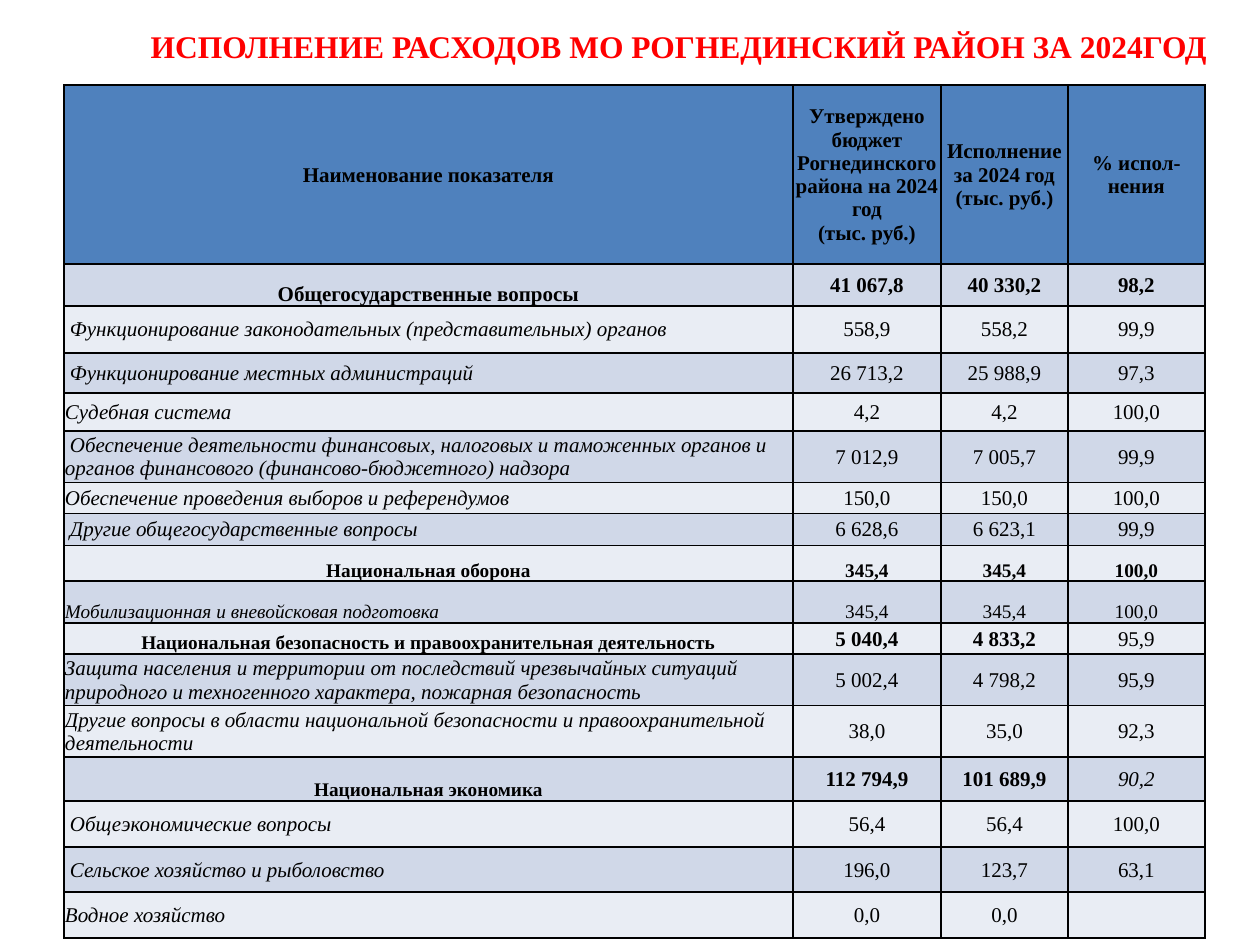
from dataclasses import dataclass, replace

from lxml import etree
from pptx import Presentation, util as u
from pptx.dml.color import RGBColor
from pptx.enum import text
from pptx.oxml import ns
from pptx.table import Table, _Cell

PX = 914400 / 126
FONT = "Times New Roman"
RED = RGBColor(0xFF, 0x00, 0x00)
BLACK = RGBColor(0x00, 0x00, 0x00)
HEADER_BLUE = RGBColor(0x4F, 0x81, 0xBD)
BANDS = (RGBColor(0xD0, 0xD8, 0xE8), RGBColor(0xE9, 0xED, 0xF4))
COLUMN_WIDTHS = (729, 148, 127, 137)
TABLE_LEFT, TABLE_TOP = 64, 85
NAME_INDENT = 5


@dataclass(frozen=True)
class Style:
    size: int = 12
    bold: bool = False
    italic: bool = False
    align: text.PP_ALIGN = text.PP_ALIGN.CENTER
    anchor: text.MSO_ANCHOR = text.MSO_ANCHOR.MIDDLE
    indent: int = 0


VALUE = Style()
BOLD = Style(bold=True)
ITALIC = Style(italic=True)
NAME = replace(ITALIC, align=text.PP_ALIGN.LEFT)
INDENTED = replace(NAME, indent=NAME_INDENT)
SECTION = replace(BOLD, anchor=text.MSO_ANCHOR.BOTTOM)
SMALL_SECTION = replace(SECTION, size=11)
SMALL_NAME = replace(NAME, size=11, anchor=text.MSO_ANCHOR.BOTTOM)
SMALL_VALUE = replace(VALUE, size=11, anchor=text.MSO_ANCHOR.BOTTOM)


@dataclass(frozen=True)
class BudgetLine:
    height: int
    name: str
    approved: str
    executed: str
    percent: str
    name_style: Style = NAME
    amount_style: Style = VALUE
    percent_style: Style = VALUE

    def cells(self) -> tuple[tuple[str, Style], ...]:
        return (
            (self.name, self.name_style),
            (self.approved, self.amount_style),
            (self.executed, self.amount_style),
            (self.percent, self.percent_style),
        )


LINES = (
    BudgetLine(179, "Наименование показателя",
               "Утверждено бюджет Рогнединского района на 2024 год\v(тыс. руб.)",
               "Исполнение за 2024 год (тыс. руб.)", "% испол-нения", BOLD, BOLD, BOLD),
    BudgetLine(42, "Общегосударственные вопросы", "41 067,8", "40 330,2", "98,2",
               SECTION, BOLD, BOLD),
    BudgetLine(47, "Функционирование законодательных (представительных) органов",
               "558,9", "558,2", "99,9", INDENTED),
    BudgetLine(40, "Функционирование местных администраций",
               "26 713,2", "25 988,9", "97,3", INDENTED),
    BudgetLine(38, "Судебная система", "4,2", "4,2", "100,0"),
    BudgetLine(51, "Обеспечение деятельности финансовых, налоговых и таможенных органов "
               "и органов финансового (финансово-бюджетного) надзора",
               "7 012,9", "7 005,7", "99,9", INDENTED),
    BudgetLine(31, "Обеспечение проведения выборов и референдумов",
               "150,0", "150,0", "100,0"),
    BudgetLine(32, "Другие общегосударственные вопросы",
               "6 628,6", "6 623,1", "99,9", INDENTED),
    BudgetLine(36, "Национальная оборона", "345,4", "345,4", "100,0",
               SMALL_SECTION, SMALL_SECTION, SMALL_SECTION),
    BudgetLine(42, "Мобилизационная и вневойсковая подготовка",
               "345,4", "345,4", "100,0", SMALL_NAME, SMALL_VALUE, SMALL_VALUE),
    BudgetLine(31, "Национальная безопасность и правоохранительная деятельность",
               "5 040,4", "4 833,2", "95,9", SMALL_SECTION, BOLD),
    BudgetLine(50, "Защита населения и территории от последствий чрезвычайных ситуаций "
               "природного и техногенного характера, пожарная безопасность",
               "5 002,4", "4 798,2", "95,9"),
    BudgetLine(48, "Другие вопросы в области национальной безопасности "
               "и правоохранительной деятельности", "38,0", "35,0", "92,3"),
    BudgetLine(44, "Национальная экономика", "112 794,9", "101 689,9", "90,2",
               SMALL_SECTION, BOLD, ITALIC),
    BudgetLine(46, "Общеэкономические вопросы", "56,4", "56,4", "100,0", INDENTED),
    BudgetLine(45, "Сельское хозяйство и рыболовство",
               "196,0", "123,7", "63,1", INDENTED),
    BudgetLine(46, "Водное хозяйство", "0,0", "0,0", ""),
)


def px(length: int) -> u.Emu:
    return u.Emu(round(length * PX))


def write(frame, wording: str, style: Style, color: RGBColor) -> None:
    paragraph = frame.paragraphs[0]
    paragraph.text = wording
    paragraph.alignment = style.align
    if style.indent:
        paragraph._p.get_or_add_pPr().set("indent", str(px(style.indent)))
    font = paragraph.font
    font.name, font.size = FONT, u.Pt(style.size)
    font.bold, font.italic = style.bold, style.italic
    font.color.rgb = color


def add_borders(cell: _Cell) -> None:
    properties = cell._tc.get_or_add_tcPr()
    for position, side in enumerate(("lnL", "lnR", "lnT", "lnB")):
        border = etree.Element(ns.qn(f"a:{side}"), w=str(u.Pt(1)))
        fill = etree.SubElement(border, ns.qn("a:solidFill"))
        etree.SubElement(fill, ns.qn("a:srgbClr"), val=str(BLACK))
        properties.insert(position, border)


def fill_line(table: Table, index: int, line: BudgetLine) -> None:
    table.rows[index].height = px(line.height)
    for column, (wording, style) in enumerate(line.cells()):
        cell = table.cell(index, column)
        cell.margin_left = cell.margin_right = cell.margin_top = px(1)
        cell.margin_bottom = 0
        cell.vertical_anchor = style.anchor
        cell.fill.solid()
        cell.fill.fore_color.rgb = BANDS[(index - 1) % 2] if index else HEADER_BLUE
        add_borders(cell)
        write(cell.text_frame, wording, style, BLACK)


def main() -> None:
    deck = Presentation()
    deck.slide_width, deck.slide_height = px(1260), px(945)
    slide = deck.slides.add_slide(deck.slide_layouts[6])

    title = slide.shapes.add_textbox(px(123), px(16), px(1112), px(59)).text_frame
    title.word_wrap = True
    title.vertical_anchor = text.MSO_ANCHOR.MIDDLE
    write(title, "ИСПОЛНЕНИЕ РАСХОДОВ МО РОГНЕДИНСКИЙ РАЙОН ЗА 2024ГОД",
          replace(BOLD, size=18), RED)

    budget = slide.shapes.add_table(
        len(LINES), len(COLUMN_WIDTHS), px(TABLE_LEFT), px(TABLE_TOP),
        px(sum(COLUMN_WIDTHS)), px(sum(line.height for line in LINES))).table
    for column, width in zip(budget.columns, COLUMN_WIDTHS):
        column.width = px(width)
    for index, line in enumerate(LINES):
        fill_line(budget, index, line)

    deck.save("out.pptx")


if __name__ == "__main__":
    main()
